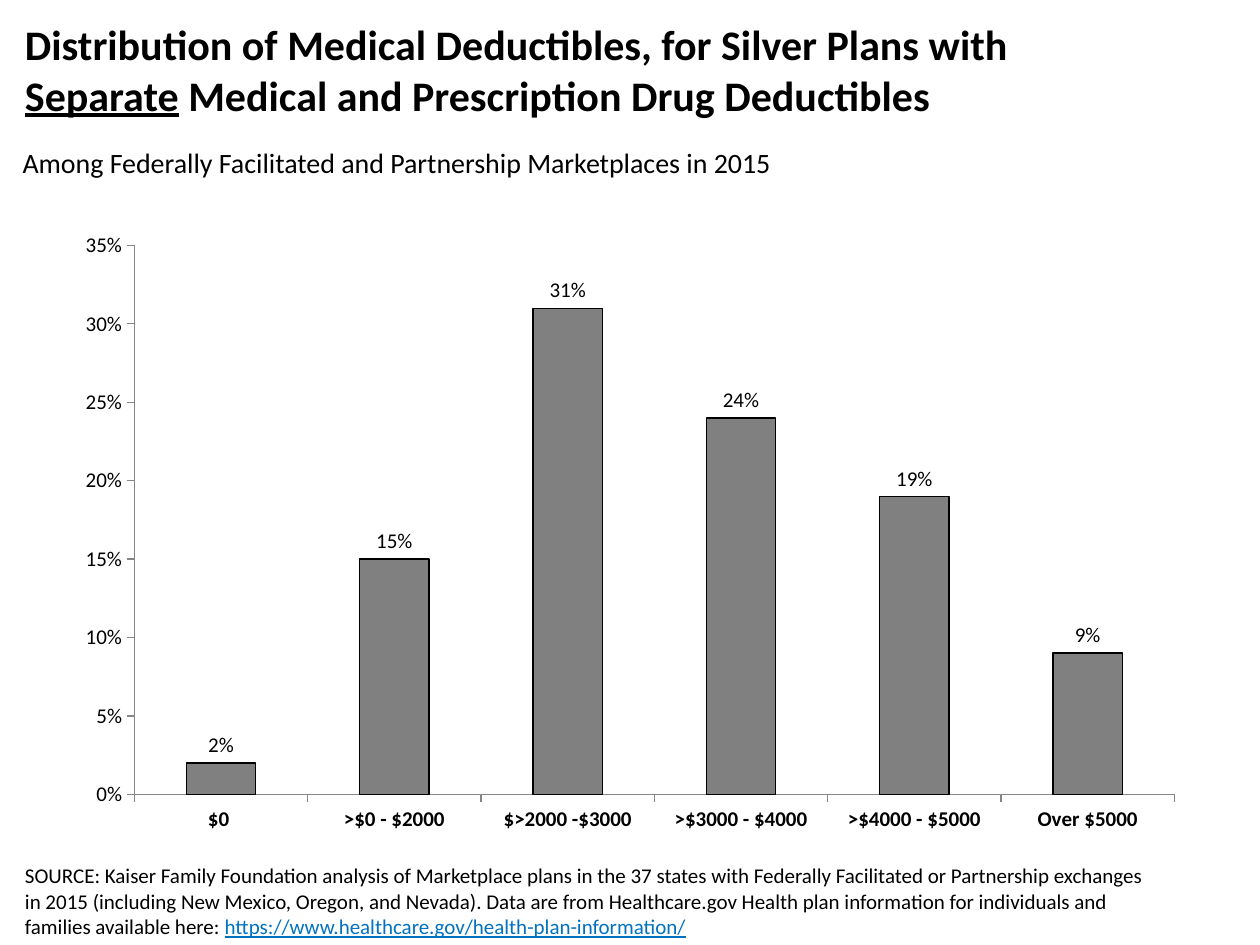
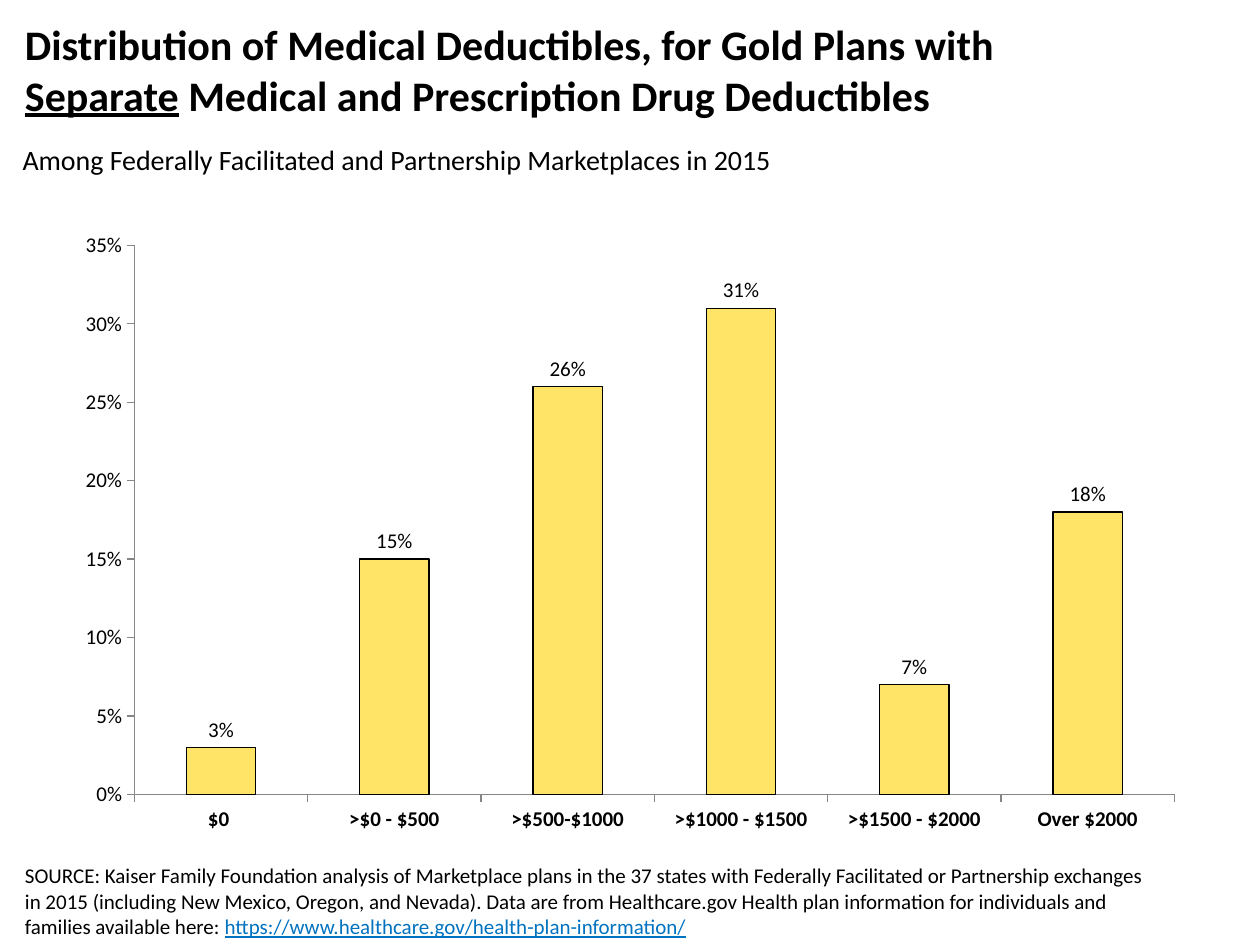
from pptx import Presentation
from pptx.chart.data import CategoryChartData
from pptx.dml.color import RGBColor
from pptx.enum.chart import XL_CHART_TYPE, XL_LABEL_POSITION, XL_TICK_MARK
from pptx.util import Pt

# Content
HEX = {"ink": "000000", "link": "0072C0", "axis": "868686",
       "silver": "808080", "gold": "FFE468"}
FONT = "Calibri"
SUB = "Among Federally Facilitated and Partnership Marketplaces in 2015"
SOURCE = (
    "SOURCE: Kaiser Family Foundation analysis of Marketplace plans in the "
    "37 states with Federally Facilitated or Partnership exchanges in 2015 "
    "(including New Mexico, Oregon, and Nevada). Data are from Healthcare.gov "
    "Health plan information for individuals and families available here: ")
LINK = "https://www.healthcare.gov/health-plan-information/"
PLANS = [
    {"name": "Silver", "fill": "silver", "sub_top": 79.9,
     "bins": [("$0 ", 0.02), (">$0 - $2000", 0.15), ("$>2000 -$3000", 0.31),
              (">$3000 - $4000", 0.24), (">$4000 - $5000", 0.19),
              ("Over $5000", 0.09)]},
    {"name": "Gold", "fill": "gold", "sub_top": 77.8,
     "bins": [("$0 ", 0.03), (">$0 - $500", 0.15), (">$500-$1000", 0.26),
              (">$1000 - $1500", 0.31), (">$1500 - $2000", 0.07),
              ("Over $2000", 0.18)]},
]


def color(key):
    return RGBColor.from_string(HEX[key])


def style(font, size, bold=False):
    font.name, font.size, font.bold = FONT, Pt(size), bold
    font.color.rgb = color("ink")


def add_text(slide, box, size, bold=False, wrap=True):
    frame = slide.shapes.add_textbox(*map(Pt, box)).text_frame
    frame.word_wrap = wrap
    para = frame.paragraphs[0]
    style(para.font, size, bold)
    return para


def add_run(para, text, under=False):
    run = para.add_run()
    run.text = text
    if under:
        run.font.underline = True
    return run


def add_bars(slide, plan):
    data = CategoryChartData(number_format="0%")
    names, shares = zip(*plan["bins"])
    data.categories = names
    data.add_series("Series 1", shares)
    chart = slide.shapes.add_chart(
        XL_CHART_TYPE.COLUMN_CLUSTERED,
        Pt(36), Pt(126), Pt(648), Pt(356.4), data).chart
    chart.has_legend = chart.has_title = False
    style(chart.font, 18)

    # Bars and labels
    plot = chart.plots[0]
    plot.gap_width = 150
    plot.vary_by_categories = False
    bars = plot.series[0].format
    bars.fill.solid()
    bars.fill.fore_color.rgb = color(plan["fill"])
    bars.line.color.rgb = color("ink")
    bars.line.width = Pt(0.75)
    plot.has_data_labels = True
    labels = plot.data_labels
    labels.show_value = True
    labels.number_format, labels.number_format_is_linked = "0%", False
    labels.position = XL_LABEL_POSITION.OUTSIDE_END
    style(labels.font, 12)

    # Axes
    for axis, bold in ((chart.category_axis, True), (chart.value_axis, False)):
        axis.has_major_gridlines = False
        axis.major_tick_mark = XL_TICK_MARK.OUTSIDE
        axis.minor_tick_mark = XL_TICK_MARK.NONE
        axis.format.line.color.rgb = color("axis")
        axis.format.line.width = Pt(0.75)
        style(axis.tick_labels.font, 12, bold)
    scale = chart.value_axis
    scale.minimum_scale, scale.maximum_scale = 0, 0.35
    scale.major_unit = 0.05
    scale.tick_labels.number_format = "0%"
    scale.tick_labels.number_format_is_linked = False


def add_plan(deck, plan):
    slide = deck.slides.add_slide(deck.slide_layouts[6])

    # Title
    title = add_text(slide, (7.2, 7.2, 705.6, 72), 24, bold=True)
    add_run(title, "Distribution of Medical Deductibles, for "
                   f"{plan['name']} Plans with ")
    title.add_line_break()
    add_run(title, "Separate", under=True)
    add_run(title, " Medical and Prescription Drug Deductibles")

    add_bars(slide, plan)

    # Subtitle and source
    add_run(add_text(slide, (5.8, plan["sub_top"], 447, 26.6), 16, wrap=False),
            SUB)
    note = add_text(slide, (7.2, 489.6, 655.2, 43.2), 12)
    add_run(note, SOURCE)
    add_run(note, LINK, under=True).font.color.rgb = color("link")


def main():
    deck = Presentation()
    deck.slide_width, deck.slide_height = Pt(720), Pt(540)
    for plan in PLANS:
        add_plan(deck, plan)
    deck.save("out.pptx")


if __name__ == "__main__":
    main()
